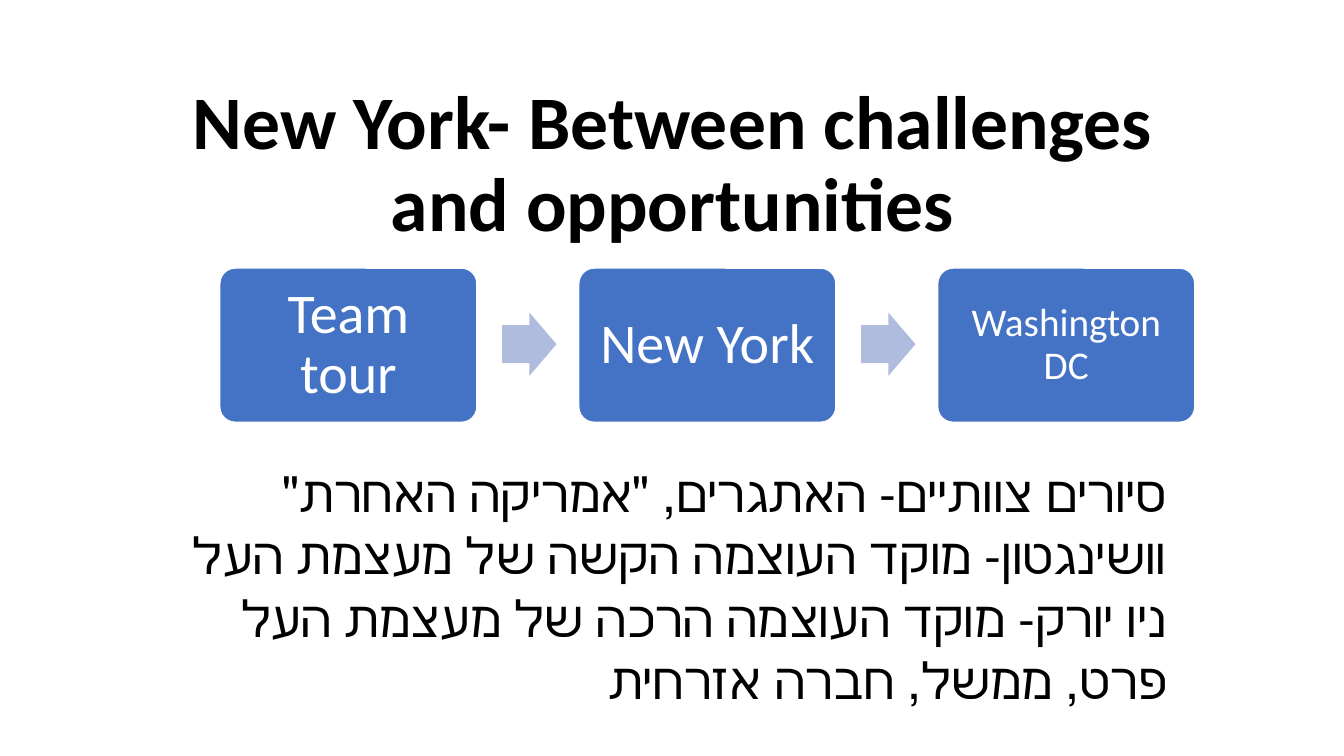
"""Build a slide with a title, a three-step tour route and Hebrew notes."""
from pptx import Presentation
from pptx.dml.color import RGBColor
from pptx.enum.lang import MSO_LANGUAGE_ID
from pptx.enum.shapes import MSO_SHAPE
from pptx.enum.text import MSO_ANCHOR, MSO_AUTO_SIZE, PP_ALIGN
from pptx.util import Inches, Pt

ROUNDED = MSO_SHAPE.ROUNDED_RECTANGLE
ARROW = MSO_SHAPE.RIGHT_ARROW
CENTER = PP_ALIGN.CENTER
RIGHT = PP_ALIGN.RIGHT
MIDDLE = MSO_ANCHOR.MIDDLE
BOTTOM = MSO_ANCHOR.BOTTOM
TOP = MSO_ANCHOR.TOP
NO_AUTOFIT = MSO_AUTO_SIZE.NONE
ENGLISH = MSO_LANGUAGE_ID.ENGLISH_US
HEBREW = MSO_LANGUAGE_ID.HEBREW

FONT = "Calibri"
TITLE_ONLY = 5
COLORS = {"text": "000000", "step": "4472C4", "white": "FFFFFF", "arrow": "B0BCDE"}

TITLE = "New York- Between challenges and opportunities"
STEPS = [("Team tour", 40), ("New York", 40), ("Washington DC", 28)]
NOTES = [
    'סיורים צוותיים- האתגרים, "אמריקה האחרת"',
    "וושינגטון- מוקד העוצמה הקשה של מעצמת העל",
    "ניו יורק- מוקד העוצמה הרכה של מעצמת העל",
    "פרט, ממשל, חברה אזרחית",
]
STEP_LEFT, STEP_PITCH, ARROW_OFFSET = 2.18, 3.56, 2.8


def color(name):
    """Return the named colour."""
    return RGBColor.from_string(COLORS[name])


def write(frame, lines, size, ink, align, anchor, spacing=0.9, before=0,
          bold=False, language=ENGLISH):
    """Fill a text frame with right-to-left paragraphs."""
    frame.word_wrap = True
    frame.auto_size = NO_AUTOFIT
    frame.vertical_anchor = anchor
    for index, line in enumerate(lines):
        para = frame.add_paragraph() if index else frame.paragraphs[0]
        para.alignment = align
        para.line_spacing = spacing
        para.space_before = Pt(before)
        para._p.get_or_add_pPr().set("rtl", "1")
        span = para.add_run()
        span.text = line
        span.font.name = FONT
        span.font.size = Pt(size)
        span.font.bold = bold
        span.font.color.rgb = color(ink)
        span.font.language_id = language


def add_title(page):
    """Place and format the title placeholder."""
    title = page.shapes.title
    title.left, title.top = Inches(1.67), Inches(0.7)
    title.width, title.height = Inches(10), Inches(1.81)
    write(title.text_frame, [TITLE], 54, "text", CENTER, BOTTOM, bold=True)


def add_shape(page, kind, left, top, width, height, fill):
    """Add a flat filled shape without an outline."""
    shape = page.shapes.add_shape(
        kind, Inches(left), Inches(top), Inches(width), Inches(height))
    shape.shadow.inherit = False
    shape.fill.solid()
    shape.fill.fore_color.rgb = color(fill)
    shape.line.fill.background()
    return shape


def add_step(page, left, label, size):
    """Add one rounded step with its label."""
    step = add_shape(page, ROUNDED, left, 2.66, 2.55, 1.53, "step")
    step.adjustments[0] = 0.1
    step.line.color.rgb = color("white")
    step.line.width = Pt(1)
    frame = step.text_frame
    frame.margin_left = frame.margin_right = Inches(0.15)
    frame.margin_top = frame.margin_bottom = Inches(0.15)
    write(frame, [label], size, "white", CENTER, MIDDLE)


def add_arrow(page, left):
    """Add an arrow between two steps."""
    arrow = add_shape(page, ARROW, left, 3.1, 0.54, 0.63, "arrow")
    arrow.adjustments[0] = 0.6
    arrow.adjustments[1] = 0.5


def add_notes(page):
    """Add the Hebrew lines under the route."""
    box = page.shapes.add_textbox(Inches(1.67), Inches(4.65), Inches(10), Inches(2.46))
    write(box.text_frame, NOTES, 36, "text", RIGHT, TOP, spacing=0.8, before=10,
          language=HEBREW)


def main():
    """Build and save the deck."""
    deck = Presentation()
    deck.slide_width, deck.slide_height = Inches(13.33), Inches(7.5)
    page = deck.slides.add_slide(deck.slide_layouts[TITLE_ONLY])
    add_title(page)
    add_notes(page)
    for index, (label, size) in enumerate(STEPS):
        left = STEP_LEFT + index * STEP_PITCH
        add_step(page, left, label, size)
        if index < len(STEPS) - 1:
            add_arrow(page, left + ARROW_OFFSET)
    deck.save("out.pptx")


if __name__ == "__main__":
    main()
